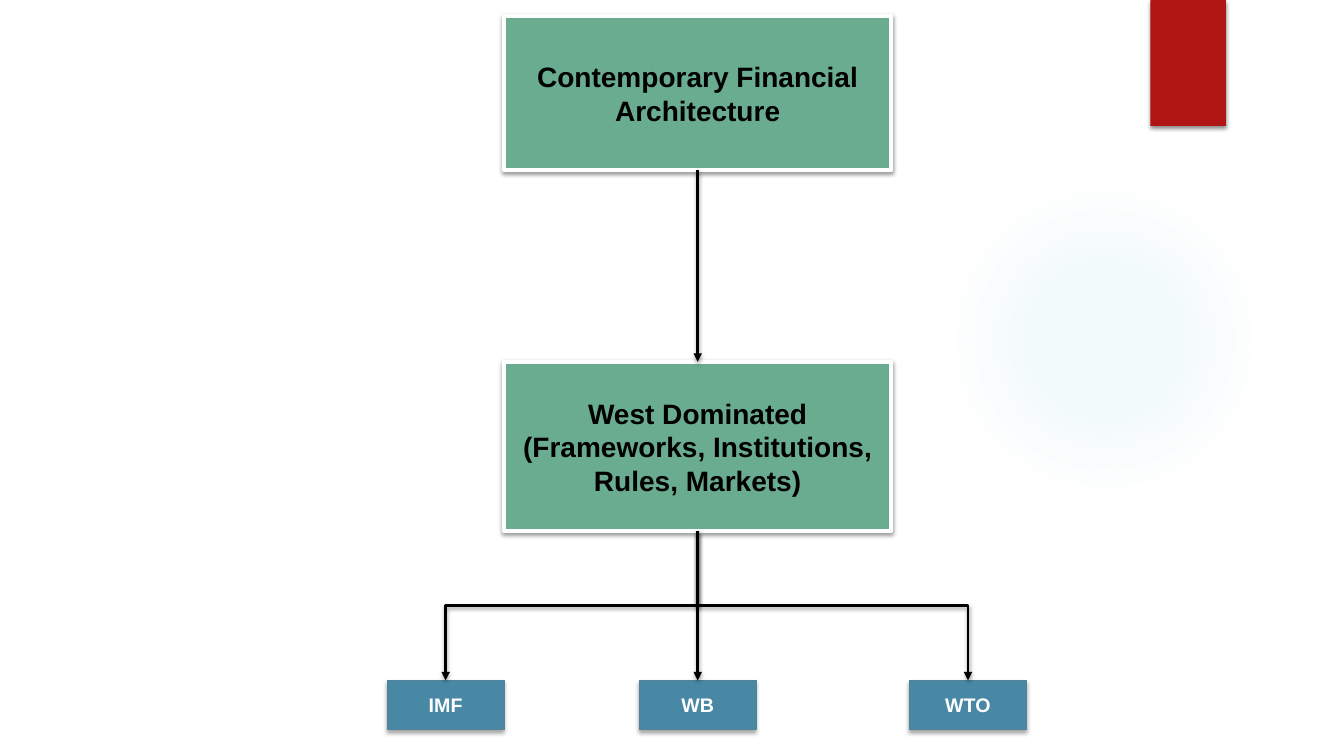
import lxml.etree
import pptx
import pptx.dml.color
import pptx.enum.shapes
import pptx.enum.text
import pptx.oxml
import pptx.oxml.ns
import pptx.util
from pptx.util import Inches

THEME = {
    "font": "Arial", "level_size": 20, "institution_size": 14,
    "black": "000000", "white": "FFFFFF", "level": "6AAC90",
    "institution": "4988A5", "institution_line": "508298",
    "ribbon": "B01513", "glow": "4CB9C3",
}
RGB = pptx.dml.color.RGBColor.from_string
QN = pptx.oxml.ns.qn
SHAPES = pptx.enum.shapes.MSO_SHAPE
CONNECTORS = pptx.enum.shapes.MSO_CONNECTOR


def add_shadow(properties, opacity, blur, distance):
    effects = properties.find(QN("a:effectLst"))
    if effects is None:
        effects = lxml.etree.SubElement(properties, QN("a:effectLst"))
    shadow = lxml.etree.SubElement(
        effects, QN("a:outerShdw"), blurRad=str(pptx.util.Pt(blur)),
        dist=str(pptx.util.Pt(distance)), dir="5400000", rotWithShape="0")
    color = lxml.etree.SubElement(shadow, QN("a:srgbClr"), val=THEME["black"])
    lxml.etree.SubElement(color, QN("a:alpha"), val=str(opacity * 1000))


def add_box(text, left, top, width, height, *, fill, line, line_width, color, size, shadow):
    shape = slide.shapes.add_shape(
        SHAPES.RECTANGLE, Inches(left), Inches(top), Inches(width), Inches(height))
    shape.shadow.inherit = False
    shape.fill.solid()
    shape.fill.fore_color.rgb = RGB(fill)
    if line:
        shape.line.color.rgb = RGB(line)
        shape.line.width = pptx.util.Pt(line_width)
    else:
        shape.line.fill.background()
    add_shadow(shape._element.spPr, *shadow)
    frame = shape.text_frame
    frame.word_wrap = True
    frame.vertical_anchor = pptx.enum.text.MSO_ANCHOR.MIDDLE
    frame.text = text
    for paragraph in frame.paragraphs:
        paragraph.alignment = pptx.enum.text.PP_ALIGN.CENTER
        paragraph.font.name = THEME["font"]
        paragraph.font.size = pptx.util.Pt(size)
        paragraph.font.bold = True
        paragraph.font.color.rgb = RGB(color)
    return shape


presentation = pptx.Presentation()
presentation.slide_width = Inches(13.33)
presentation.slide_height = Inches(7.5)
slide = presentation.slides.add_slide(presentation.slide_layouts[6])

glow = slide.shapes.add_shape(
    SHAPES.OVAL, Inches(9.41), Inches(1.83), Inches(3.08), Inches(3.08))
glow.shadow.inherit = False
glow.line.fill.background()
glow.fill.background()
stops = "".join(
    f'<a:gs pos="{position * 1000}"><a:srgbClr val="{THEME["glow"]}">'
    f'<a:alpha val="{opacity * 1000}"/></a:srgbClr></a:gs>'
    for position, opacity in [(0, 7), (36, 6), (69, 0), (100, 0)])
gradient = pptx.oxml.parse_xml(
    f'<a:gradFill {pptx.oxml.ns.nsdecls("a")} rotWithShape="1"><a:gsLst>{stops}</a:gsLst>'
    '<a:path path="circle"><a:fillToRect l="50000" t="50000" r="50000" b="50000"/></a:path>'
    '</a:gradFill>')
glow_properties = glow._element.spPr
glow_properties.replace(glow_properties.find(QN("a:noFill")), gradient)

add_box("", 11.41, 0, 0.75, 1.25, fill=THEME["ribbon"], line=None, line_width=0,
        color=THEME["white"], size=THEME["institution_size"], shadow=(45, 3, 2))

institutions = [
    add_box(name, left, 6.75, 1.16, 0.49, fill=THEME["institution"],
            line=THEME["institution_line"], line_width=0.75, color=THEME["white"],
            size=THEME["institution_size"], shadow=(35, 3.1, 1.8))
    for name, left in [("IMF", 3.84), ("WB", 6.34), ("WTO", 9.02)]]

dominated, architecture = [
    add_box(text, 5, top, 3.84, height, fill=THEME["level"], line=THEME["white"],
            line_width=3, color=THEME["black"], size=THEME["level_size"],
            shadow=(38, 3.1, 1.6))
    for text, top, height in [
        ("West Dominated\n(Frameworks, Institutions, Rules, Markets)", 3.59, 1.68),
        ("Contemporary Financial Architecture", 0.16, 1.53)]]

links = [(architecture, dominated)] + [(dominated, target) for target in institutions]
for source, target in links:
    start_x = source.left + source.width // 2
    end_x = target.left + target.width // 2
    start_y = source.top + source.height
    drop, shift = target.top - start_y, end_x - start_x
    bent = abs(shift) > Inches(0.05)
    arrow = slide.shapes.add_connector(
        CONNECTORS.ELBOW if bent else CONNECTORS.STRAIGHT,
        start_x, start_y, end_x, target.top)
    arrow.begin_connect(source, 2)
    arrow.end_connect(target, 0)
    if bent:
        arrow.width, arrow.height = drop, abs(shift)
        arrow.left = (start_x + end_x - drop) // 2
        arrow.top = (start_y + target.top - abs(shift)) // 2
        transform = arrow._element.spPr.find(QN("a:xfrm"))
        transform.set("rot", str((270 if shift > 0 else 90) * 60000))
        transform.set("flipH", "1" if shift > 0 else "0")
    arrow.line.color.rgb = RGB(THEME["black"])
    arrow.line.width = pptx.util.Pt(2)
    lxml.etree.SubElement(arrow.line._get_or_add_ln(), QN("a:tailEnd"), type="triangle")
    add_shadow(arrow._element.spPr, 38, 3.1, 1.6)

presentation.save("out.pptx")
